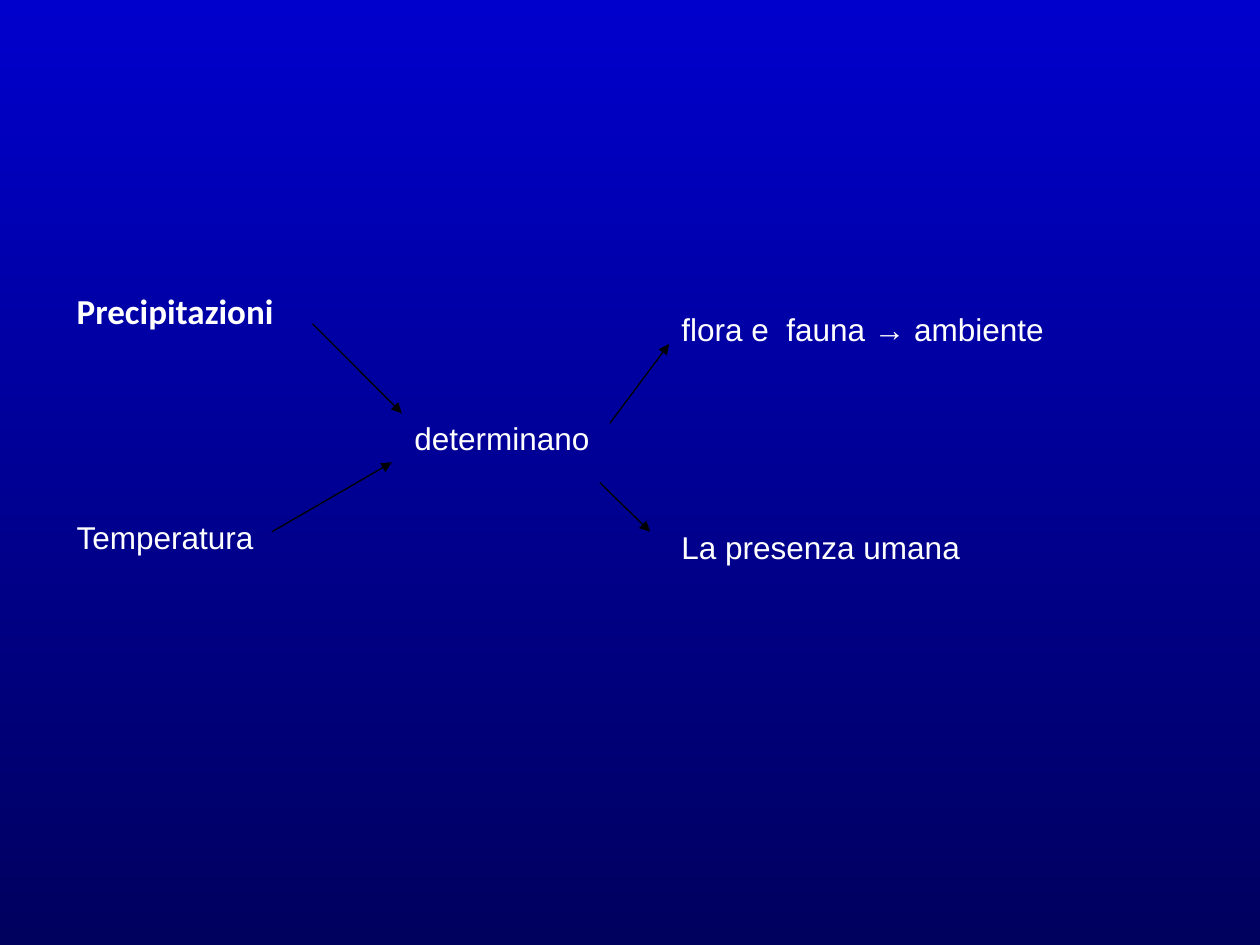
"""Build a slide on how rainfall and temperature shape the environment."""
from dataclasses import dataclass

from lxml import etree
from pptx import Presentation
from pptx.dml.color import RGBColor
from pptx.enum.shapes import MSO_CONNECTOR
from pptx.enum.text import MSO_AUTO_SIZE
from pptx.oxml.ns import qn
from pptx.slide import Slide
from pptx.util import Inches, Pt

STRAIGHT = MSO_CONNECTOR.STRAIGHT
GROW = MSO_AUTO_SIZE.SHAPE_TO_FIT_TEXT


@dataclass(frozen=True)
class Theme:
    top: RGBColor = RGBColor(0x00, 0x00, 0xCC)
    base: RGBColor = RGBColor(0x00, 0x00, 0x5E)
    text: RGBColor = RGBColor(0xFF, 0xFF, 0xFF)
    line: RGBColor = RGBColor(0x00, 0x00, 0x00)
    font: str = "Arial"
    head: str = "Calibri"
    size: Pt = Pt(18)
    large: Pt = Pt(20)
    width: Pt = Pt(0.75)


@dataclass(frozen=True)
class Label:
    text: str
    left: float
    top: float
    width: float
    height: float = 0.4
    wrap: bool = False
    strong: bool = False


@dataclass(frozen=True)
class Arrow:
    start: tuple[float, float]
    end: tuple[float, float]


THEME = Theme()
LEFT, MID, RIGHT = 0.51, 3.19, 5.31

LABELS = [
    Label("Precipitazioni", LEFT, 2.25, 2.28, 0.43, wrap=True, strong=True),
    Label("Temperatura", LEFT, 4.06, 1.63),
    Label("determinano", MID, 3.28, 1.59),
    Label("flora e  fauna → ambiente", RIGHT, 2.41, 4.02, wrap=True),
    Label("La presenza umana", RIGHT, 4.14, 2.41),
]
ARROWS = [
    Arrow((2.48, 2.57), (MID, 3.28)),
    Arrow((2.16, 4.22), (3.11, 3.67)),
    Arrow((4.84, 3.36), (RIGHT, 2.73)),
    Arrow((4.76, 3.83), (5.16, 4.22)),
]


def paint(slide: Slide) -> None:
    fill = slide.background.fill
    fill.gradient()
    fill.gradient_angle = 270
    for stop, tone, place in zip(fill.gradient_stops, (THEME.top, THEME.base), (0, 1)):
        stop.color.rgb = tone
        stop.position = place


def write(slide: Slide, label: Label) -> None:
    box = slide.shapes.add_textbox(
        Inches(label.left), Inches(label.top), Inches(label.width), Inches(label.height)
    )
    frame = box.text_frame
    frame.word_wrap = label.wrap
    frame.auto_size = GROW
    para = frame.paragraphs[0]
    para.text = label.text
    font = para.font
    font.name = THEME.head if label.strong else THEME.font
    font.size = THEME.large if label.strong else THEME.size
    font.bold = label.strong
    font.color.rgb = THEME.text


def link(slide: Slide, arrow: Arrow) -> None:
    ends = [Inches(value) for value in arrow.start + arrow.end]
    line = slide.shapes.add_connector(STRAIGHT, *ends)
    line.line.color.rgb = THEME.line
    line.line.width = THEME.width
    props = line._element.spPr
    etree.SubElement(props.find(qn("a:ln")), qn("a:tailEnd"), type="triangle")
    etree.SubElement(props, qn("a:effectLst"))


def main() -> None:
    deck = Presentation()
    deck.slide_width = Inches(10)
    deck.slide_height = Inches(7.5)
    slide = deck.slides.add_slide(deck.slide_layouts[6])
    paint(slide)
    for label in LABELS:
        write(slide, label)
    for arrow in ARROWS:
        link(slide, arrow)
    deck.save("out.pptx")


if __name__ == "__main__":
    main()
